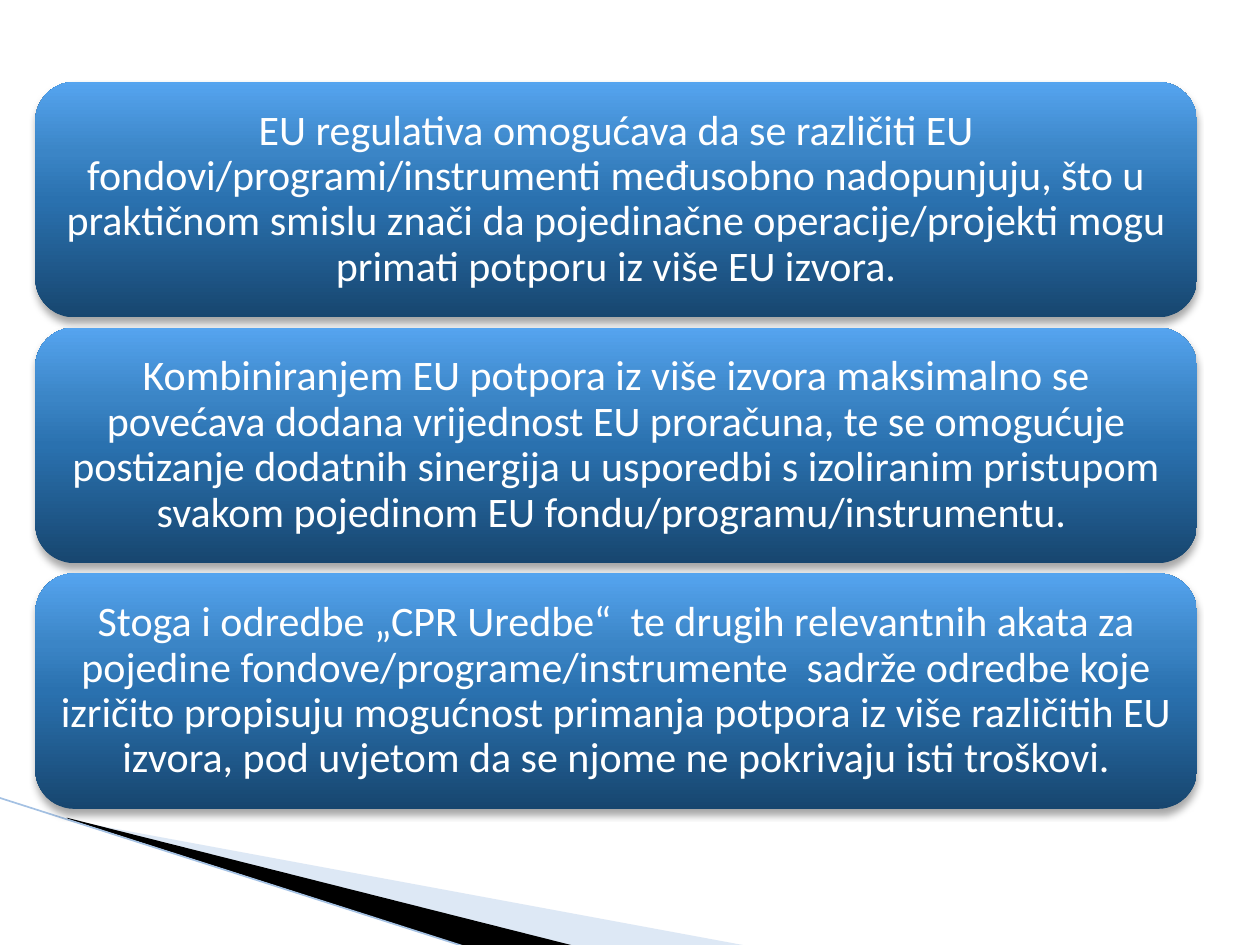
from lxml import etree
from pptx import Presentation
from pptx import util as u
from pptx.dml.color import RGBColor
from pptx.enum import shapes, text
from pptx.oxml import parse_xml
from pptx.oxml.ns import nsdecls, qn

COLORS = {"wedge_light": "ABC6E6", "wedge_dark": "000000", "edge": "A4C1E3",
          "text": "FFFFFF", "shadow": "000000"}
GRADIENT = [(0, "17466F"), (50, "2A71AF"), (70, "3B85C6"), (100, "55A4EF")]
STATEMENTS = [
    "EU regulativa omogućava da se različiti EU fondovi/programi/instrumenti "
    "međusobno nadopunjuju, što u praktičnom smislu znači da pojedinačne "
    "operacije/projekti mogu primati potporu iz više EU izvora.",
    "Kombiniranjem EU potpora iz više izvora maksimalno se povećava dodana "
    "vrijednost EU proračuna, te se omogućuje postizanje dodatnih sinergija u "
    "usporedbi s izoliranim pristupom svakom pojedinom EU "
    "fondu/programu/instrumentu. ",
    "Stoga i odredbe „CPR Uredbe“  te drugih relevantnih akata za pojedine "
    "fondove/programe/instrumente  sadrže odredbe koje izričito propisuju "
    "mogućnost primanja potpora iz više različitih EU izvora, pod uvjetom da se "
    "njome ne pokrivaju isti troškovi.",
]
WEDGES = [
    ("wedge_light", 40, [(0.55, 6.51), (5.95, 7.51), (4.56, 7.51), (0.55, 6.5)]),
    ("wedge_dark", 100, [(0.53, 6.49), (4.57, 7.51), (3.72, 7.52), (0.54, 6.5)]),
]
EDGE = [(-0.01, 6.33), (3.71, 7.52)]
CARD_LEFT, CARD_TOP, CARD_WIDTH, CARD_HEIGHT, CARD_PITCH = 0.28, 0.65, 9.22, 1.87, 1.95
FRAME_FORMAT = {"word_wrap": True, "vertical_anchor": text.MSO_ANCHOR.MIDDLE,
                **{f"margin_{side}": u.Inches(0.1)
                   for side in ("left", "top", "right", "bottom")}}
PARAGRAPH_FORMAT = {"alignment": text.PP_ALIGN.CENTER, "line_spacing": 0.9,
                    "space_after": u.Pt(8.4)}
FONT_FORMAT = {"name": "Calibri", "size": u.Pt(24)}


def apply_format(target, values):
    for name, value in values.items():
        setattr(target, name, value)


def add_wedge(slide, color, opacity, points):
    start, *rest = [(u.Inches(x), u.Inches(y)) for x, y in points]
    builder = slide.shapes.build_freeform(*start)
    builder.add_line_segments(rest)
    shape = builder.convert_to_shape()
    shape.shadow.inherit = False
    shape.line.fill.background()
    shape.fill.solid()
    shape.fill.fore_color.rgb = RGBColor.from_string(COLORS[color])
    if opacity < 100:
        color_element = shape.fill._xPr.find(".//" + qn("a:srgbClr"))
        etree.SubElement(color_element, qn("a:alpha"), val=str(opacity * 1000))


def add_edge(slide):
    ends = [u.Inches(value) for point in EDGE for value in point]
    connector = slide.shapes.add_connector(shapes.MSO_CONNECTOR.STRAIGHT, *ends)
    connector.line.color.rgb = RGBColor.from_string(COLORS["edge"])
    connector.line.width = u.Pt(0.95)
    etree.SubElement(connector._element.spPr, qn("a:effectLst"))


def add_card(slide, top, statement):
    box = [u.Inches(v) for v in (CARD_LEFT, top, CARD_WIDTH, CARD_HEIGHT)]
    shape = slide.shapes.add_shape(shapes.MSO_SHAPE.ROUNDED_RECTANGLE, *box)
    shape.line.fill.background()
    stops = "".join(f'<a:gs pos="{position * 1000}"><a:srgbClr val="{color}"/></a:gs>'
                    for position, color in GRADIENT)
    properties = shape._element.spPr
    properties.insert(2, parse_xml(
        f'<a:gradFill {nsdecls("a")} rotWithShape="1"><a:gsLst>{stops}</a:gsLst>'
        '<a:lin ang="16200000" scaled="0"/></a:gradFill>'))
    properties.append(parse_xml(
        f'<a:effectLst {nsdecls("a")}><a:outerShdw blurRad="{u.Pt(4)}" '
        f'dist="{u.Pt(3)}" dir="5400000" rotWithShape="0">'
        f'<a:srgbClr val="{COLORS["shadow"]}"><a:alpha val="35000"/></a:srgbClr>'
        '</a:outerShdw></a:effectLst>'))
    apply_format(shape.text_frame, FRAME_FORMAT)
    paragraph = shape.text_frame.paragraphs[0]
    apply_format(paragraph, PARAGRAPH_FORMAT)
    run = paragraph.add_run()
    run.text = statement
    apply_format(run.font, FONT_FORMAT)
    run.font.color.rgb = RGBColor.from_string(COLORS["text"])


def main():
    presentation = Presentation()
    presentation.slide_width, presentation.slide_height = u.Inches(10), u.Inches(7.5)
    slide = presentation.slides.add_slide(presentation.slide_layouts[6])
    for wedge in WEDGES:
        add_wedge(slide, *wedge)
    add_edge(slide)
    for index, statement in enumerate(STATEMENTS):
        add_card(slide, CARD_TOP + index * CARD_PITCH, statement)
    presentation.save("out.pptx")


if __name__ == "__main__":
    main()
